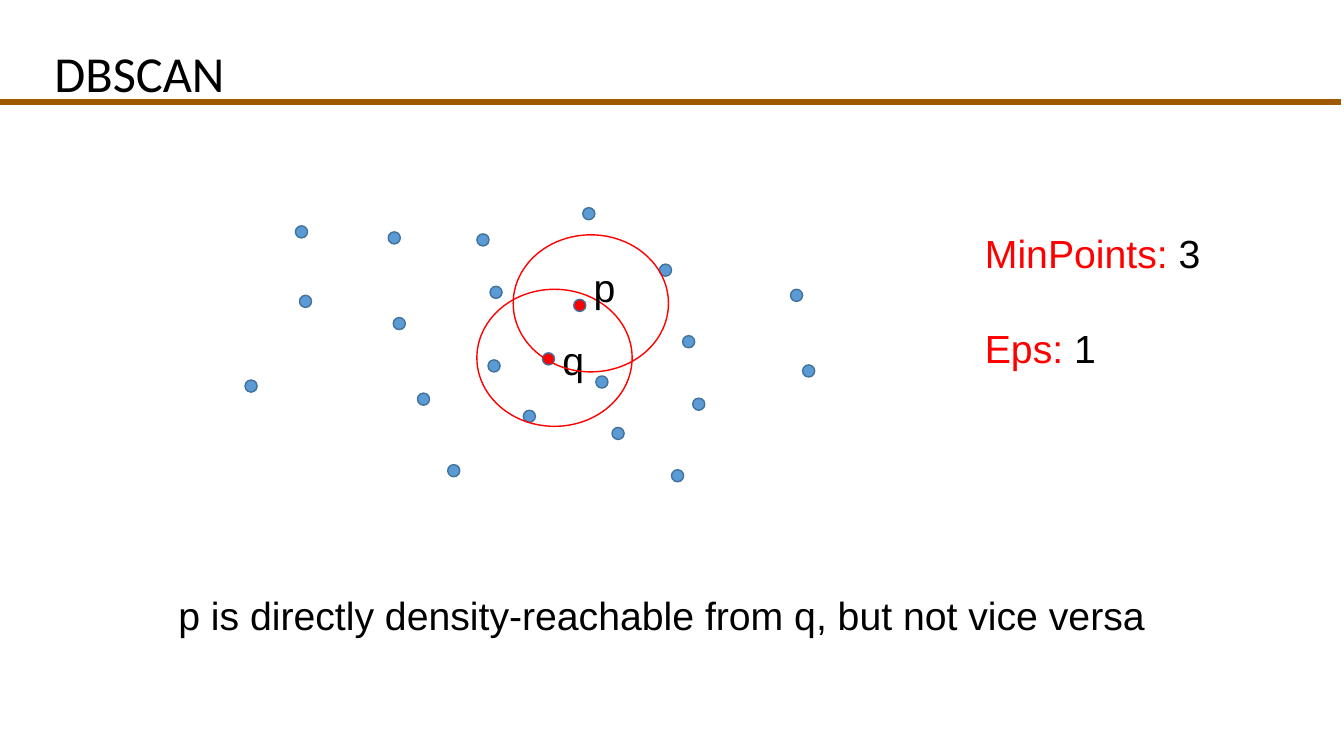
from lxml.etree import SubElement as Sub
from pptx import Presentation as Deck
from pptx.dml.color import RGBColor as Rgb
from pptx.enum.shapes import MSO_CONNECTOR as Link, MSO_SHAPE as Kind
from pptx.enum.text import MSO_ANCHOR as Anchor, MSO_AUTO_SIZE as Fit, PP_ALIGN as Align
from pptx.oxml.ns import qn
from pptx.util import Inches, Pt

COLS, ROWS = 13.33, 7.5
HUES = {"ink": "000000", "red": "FF0000", "dot": "5B9BD5", "edge": "42719B", "rule": "9F5900"}
DOT = 0.12
RING = (1.54, 1.36)
DOTS = [
    (4.44, 4.61), (5.19, 4.07), (3.9, 3.15), (6.54, 2.62), (4.73, 2.32),
    (2.97, 2.93), (5.91, 3.73), (6.66, 4.66), (6.87, 3.95), (6.07, 4.24),
    (4.84, 3.57), (6.77, 3.33), (7.96, 3.62), (7.84, 2.87), (3.85, 2.3),
    (2.43, 3.77), (4.14, 3.9), (4.86, 2.84), (2.93, 2.24), (5.78, 2.06),
]
CORES = [
    ("q", (5.38, 3.5), (5.48, 3.29), (4.73, 2.87)),
    ("p", (5.69, 2.97), (5.79, 2.56), (5.09, 2.33)),
]


def hue(name):
    return Rgb.from_string(HUES[name])


def write(para, text, size=28, font="Arial", color="ink"):
    run = para.add_run()
    run.text = text
    run.font.size = Pt(size)
    run.font.name = font
    run.font.color.rgb = hue(color)


class Board:
    """Draws styled elements on one slide, placed by grid columns and rows."""

    def __init__(self, deck):
        self.wide = deck.slide_width / COLS
        self.high = deck.slide_height / ROWS
        self.slide = deck.slides.add_slide(deck.slide_layouts[5])
        self.shapes = self.slide.shapes

    def place(self, col, row, cols, rows):
        return (round(col * self.wide), round(row * self.high),
                round(cols * self.wide), round(rows * self.high))

    def title(self, text, *area):
        head = self.shapes.title
        head.left, head.top, head.width, head.height = self.place(*area)
        frame = head.text_frame
        frame.auto_size = Fit.NONE
        frame.vertical_anchor = Anchor.MIDDLE
        para = frame.paragraphs[0]
        para.alignment = Align.LEFT
        write(para, text, size=36, font="Calibri")

    def oval(self, *area, fill=None, line="red"):
        disc = self.shapes.add_shape(Kind.FLOWCHART_CONNECTOR, *self.place(*area))
        disc.shadow.inherit = False
        if fill:
            disc.fill.solid()
            disc.fill.fore_color.rgb = hue(fill)
        else:
            disc.fill.background()
        disc.line.color.rgb = hue(line)
        disc.line.width = Pt(1)

    def text(self, lines, *area, gap=0):
        frame = self.shapes.add_textbox(*self.place(*area)).text_frame
        frame.word_wrap = True
        for i, runs in enumerate(lines):
            para = frame.add_paragraph() if i else frame.paragraphs[0]
            para.space_before = Pt(gap if i else 0)
            for text, color in runs:
                write(para, text, color=color)

    def rule(self, row, cols, width=4.5):
        x, y, span, _ = self.place(0, row, cols, 0)
        line = self.shapes.add_connector(Link.STRAIGHT, x, y, x + span, y)
        line.line.color.rgb = hue("rule")
        line.line.width = Pt(width)
        Sub(line._element.spPr, qn("a:effectLst"))


def main():
    deck = Deck()
    deck.slide_width, deck.slide_height = Inches(COLS), Inches(ROWS)
    board = Board(deck)
    board.title("DBSCAN", 0.44, 0.3, 12.42, 0.83)
    board.rule(1.01, 13.3)
    for spot in DOTS:
        board.oval(*spot, DOT, DOT, fill="dot", line="edge")
    for name, spot, label, ring in CORES:
        board.oval(*spot, DOT, DOT, fill="red", line="edge")
        board.text([[(name, "ink")]], *label, 0.6, 0.57)
        board.oval(*ring, *RING)
    board.text([[("MinPoints: ", "red"), ("3", "ink")], [("Eps: ", "red"), ("1", "ink")]],
               9.67, 2.23, 2.52, 1.51, gap=34)
    board.text([[("p is directly density-reachable from q, but not vice versa", "ink")]],
               1.67, 5.82, 10.81, 0.57)
    deck.save("out.pptx")


if __name__ == "__main__":
    main()
